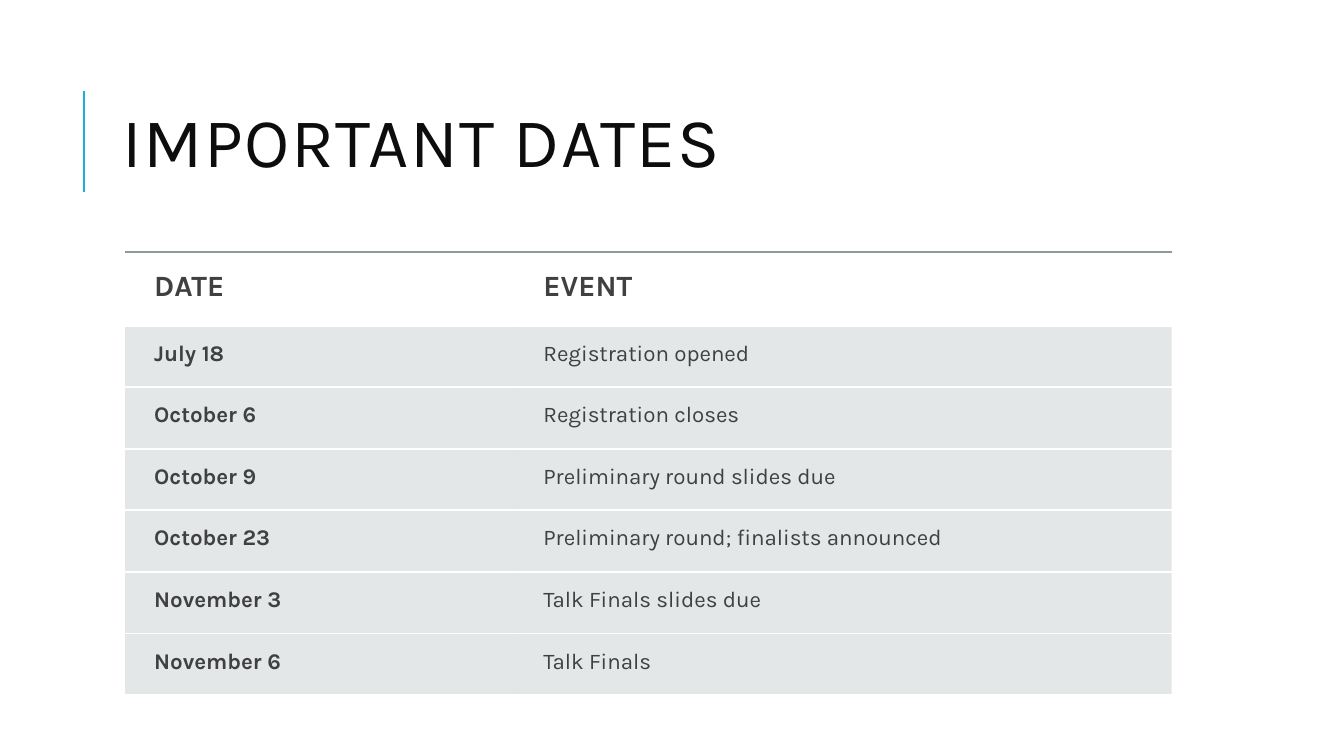
from dataclasses import dataclass
from typing import Any, NamedTuple

from lxml.etree import SubElement
from pptx import Presentation
from pptx.dml.color import RGBColor as RGB
from pptx.enum.shapes import MSO_CONNECTOR as CONN
from pptx.enum.text import MSO_ANCHOR as ANCHOR
from pptx.oxml.ns import qn
from pptx.util import Pt


@dataclass(frozen=True)
class Theme:
    font: str = "Karla"
    accent: str = "1CADE4"
    title: str = "0D0D0D"
    text: str = "404040"
    band: str = "B4BCBE"
    head_rule: str = "8F9A9D"
    row_rule: str = "FFFFFF"
    title_size: float = 50
    head_size: float = 21
    body_size: float = 16
    rule_width: float = 1.5
    band_alpha: int = 35
    head_rule_alpha: int = 60


class Entry(NamedTuple):
    date: str
    event: str


class RowStyle(NamedTuple):
    size: float
    pad: float
    height: float
    top_rule: str
    rule_alpha: int
    banded: bool
    event_bold: bool


THEME = Theme()
HEAD = RowStyle(THEME.head_size, 12.4, 52.6, THEME.head_rule, THEME.head_rule_alpha, False, True)
BODY = RowStyle(THEME.body_size, 10.8, 44, THEME.row_rule, 100, True, False)
LEFT_PAD = 20.88
COLUMNS = (278, 469.6)
NO_STYLE = "{2D5ABB26-0587-4C30-8999-92F81FD0307C}"

ENTRIES = [
    Entry("DATE", "EVENT"),
    Entry("July 18", "Registration opened"),
    Entry("October 6", "Registration closes"),
    Entry("October 9", "Preliminary round slides due"),
    Entry("October 23", "Preliminary round; finalists announced"),
    Entry("November 3", "Talk Finals slides due"),
    Entry("November 6", "Talk Finals"),
]


def set_all(target: Any, values: dict[str, Any]) -> None:
    for name, value in values.items():
        setattr(target, name, value)


def add_run(p: Any, text: str, size: float, color: str, bold: bool = False) -> Any:
    r = p.add_run()
    r.text = text
    set_all(r.font, {"name": THEME.font, "size": Pt(size), "bold": bold})
    r.font.color.rgb = RGB.from_string(color)
    return r


def add_alpha(color_el: Any, percent: int) -> None:
    SubElement(color_el, qn("a:alpha"), val=str(percent * 1000))


def add_border(cell: Any, side: str, color: str, alpha: int = 100) -> None:
    """Rule one side of a cell; call before filling it, as lines precede fills."""
    ln = SubElement(cell._tc.get_or_add_tcPr(), qn(f"a:ln{side}"), w=str(Pt(THEME.rule_width)))
    fill = SubElement(ln, qn("a:solidFill"))
    add_alpha(SubElement(fill, qn("a:srgbClr"), val=color), alpha)


def fill_cell(cell: Any, text: str, style: RowStyle, bold: bool) -> None:
    pad = Pt(style.pad)
    set_all(cell, {"margin_left": Pt(LEFT_PAD), "margin_top": pad,
                   "margin_right": pad, "margin_bottom": pad})
    add_run(cell.text_frame.paragraphs[0], text, style.size, THEME.text, bold)
    add_border(cell, "T", style.top_rule, style.rule_alpha)
    add_border(cell, "B", THEME.row_rule)
    if style.banded:
        cell.fill.solid()
        cell.fill.fore_color.rgb = RGB.from_string(THEME.band)
        add_alpha(next(cell._tc.tcPr.find(qn("a:solidFill")).iter(qn("a:srgbClr"))),
                  THEME.band_alpha)
    else:
        cell.fill.background()


def add_accent_line(slide: Any) -> None:
    line = slide.shapes.add_connector(CONN.STRAIGHT, Pt(60), Pt(136.8), Pt(60), Pt(64.8))
    line.line.color.rgb = RGB.from_string(THEME.accent)
    line.line.width = Pt(THEME.rule_width)
    SubElement(line._element.spPr, qn("a:effectLst"))


def add_title(slide: Any, text: str) -> None:
    tf = slide.shapes.add_textbox(Pt(80.64), Pt(46.08), Pt(765.36), Pt(118.08)).text_frame
    set_all(tf, {"word_wrap": True, "vertical_anchor": ANCHOR.MIDDLE})
    p = tf.paragraphs[0]
    p.line_spacing = 0.8
    r = add_run(p, text, THEME.title_size, THEME.title)
    r.font._element.set("spc", "100")


def add_dates_table(slide: Any, entries: list[Entry]) -> None:
    styles = [HEAD] + [BODY] * (len(entries) - 1)
    frame = slide.shapes.add_table(len(entries), len(COLUMNS), Pt(89.3), Pt(180),
                                   Pt(sum(COLUMNS)), Pt(sum(s.height for s in styles)))
    table = frame.table
    set_all(table, {"first_row": False, "horz_banding": False})
    table._tbl.tblPr.find(qn("a:tableStyleId")).text = NO_STYLE
    for column, width in zip(table.columns, COLUMNS):
        column.width = Pt(width)
    for row, entry, style in zip(table.rows, entries, styles):
        row.height = Pt(style.height)
        fill_cell(row.cells[0], entry.date, style, True)
        fill_cell(row.cells[1], entry.event, style, style.event_bold)


def main() -> None:
    prs = Presentation()
    set_all(prs, {"slide_width": Pt(960), "slide_height": Pt(540)})
    slide = prs.slides.add_slide(prs.slide_layouts[6])
    add_accent_line(slide)
    add_title(slide, "IMPORTANT DATES")
    add_dates_table(slide, ENTRIES)
    prs.save("out.pptx")


if __name__ == "__main__":
    main()
